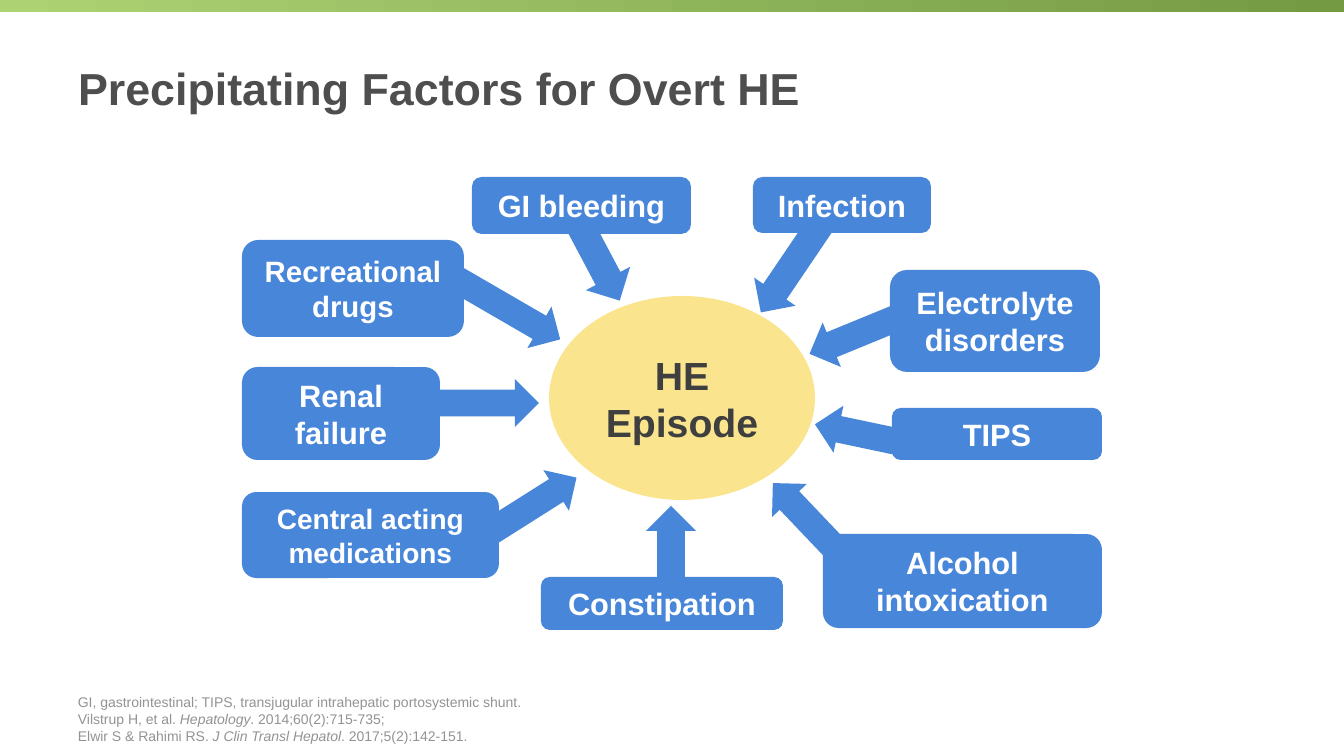
from pptx import Presentation
from pptx.dml.color import RGBColor
from pptx.enum.shapes import MSO_SHAPE as Shape
from pptx.enum.text import MSO_ANCHOR as Anchor, MSO_AUTO_SIZE as AutoSize, PP_ALIGN as Align
from pptx.util import Pt

PX = 914400 / 100.8
BLUE, YELLOW, WHITE = "4886D9", "FAE58E", "FFFFFF"
DARK, TITLE_GREY, NOTE_GREY = "3F3F3F", "4D4E4D", "939393"
BAND_COLOURS = ("ACD274", "759A44")

TITLE = "Precipitating Factors for Overt HE"
EPISODE = ["HE", "Episode"]
# factor, text size, box (left, top, width, height), arrow (same), arrow rotation
FACTORS = [
    ("GI bleeding", 22, (472, 177, 219, 57), (573, 213, 50, 93), 332.1),
    ("Recreational drugs", 21, (242, 240, 222, 97), (483, 247, 48, 123), 300.1),
    ("Renal failure", 22, (242, 367, 198, 93), (459, 347, 48, 112), 270),
    ("Infection", 22, (753, 177, 178, 56), (767, 211, 50, 111), 34.1),
    ("Electrolyte disorders", 22, (890, 270, 210, 102), (829, 289, 48, 94), 67.7),
    ("TIPS", 22, (892, 408, 210, 52), (837, 387, 48, 94), 101.9),
    ("Constipation", 22, (541, 577, 242, 53), (646, 506, 50, 81), 180),
    ("Central acting medications", 20, (242, 492, 257, 86), (506, 452, 48, 110), 237.7),
    ("Alcohol intoxication", 22, (823, 534, 279, 94), (784, 469, 48, 102), 136.4),
]
# each line alternates plain and italic text
REFERENCES = [
    ("GI, gastrointestinal; TIPS, transjugular intrahepatic portosystemic shunt.",),
    ("Vilstrup H, et al. ", "Hepatology", ". 2014;60(2):715-735;"),
    ("Elwir S & Rahimi RS. ", "J Clin Transl Hepatol", ". 2017;5(2):142-151."),
]


def px(*lengths):
    return [round(length * PX) for length in lengths]


def rgb(colour):
    return RGBColor.from_string(colour)


def style(font, size, colour, bold):
    font.name, font.size, font.bold = "Arial", Pt(size), bold
    font.color.rgb = rgb(colour)


def write(holder, lines, size, colour, bold=True, align=Align.CENTER,
          anchor=Anchor.MIDDLE, breaks=False):
    """Write lines of alternating plain and italic parts, as paragraphs or with line breaks."""
    frame = holder.text_frame
    frame.word_wrap, frame.auto_size = True, AutoSize.NONE
    frame.vertical_anchor = anchor
    paragraph = frame.paragraphs[0]
    for row, parts in enumerate(lines):
        if row and breaks:
            paragraph.add_line_break()
        elif row:
            paragraph = frame.add_paragraph()
        paragraph.alignment = align
        for order, part in enumerate(parts):
            run = paragraph.add_run()
            run.text = part
            style(run.font, size, colour, bold)
            if order % 2:
                run.font.italic = True


def add_shape(kind, place, colour=None):
    shape = slide.shapes.add_shape(kind, *px(*place))
    shape.shadow.inherit = False
    shape.line.fill.background()
    if colour:
        shape.fill.solid()
        shape.fill.fore_color.rgb = rgb(colour)
    return shape


deck = Presentation()
deck.slide_width, deck.slide_height = px(1344, 756)
slide = deck.slides.add_slide(deck.slide_layouts[5])

band = add_shape(Shape.RECTANGLE, (0, 0, 1344, 12))
band.fill.gradient()
band.fill.gradient_angle = 0
for stop, colour in zip(band.fill.gradient_stops, BAND_COLOURS):
    stop.color.rgb = rgb(colour)

title = slide.shapes.title
title.left, title.top, title.width, title.height = px(68, 22, 1184, 131)
write(title, [[TITLE]], 32, TITLE_GREY, align=Align.LEFT)

for _, _, _, place, rotation in FACTORS:
    arrow = add_shape(Shape.DOWN_ARROW, place, BLUE)
    arrow.adjustments[0], arrow.adjustments[1] = 0.56, 0.5
    arrow.rotation = rotation

episode = add_shape(Shape.OVAL, (549, 296, 266, 204), YELLOW)
write(episode, [[line] for line in EPISODE], 28, DARK)

for factor, size, place, _, _ in FACTORS:
    write(add_shape(Shape.ROUNDED_RECTANGLE, place, BLUE), [[factor]], size, WHITE)

references = slide.shapes.add_textbox(*px(68, 701, 1184, 48))
write(references, REFERENCES, 10, NOTE_GREY, bold=False, align=Align.LEFT,
      anchor=Anchor.BOTTOM, breaks=True)

deck.save("out.pptx")
